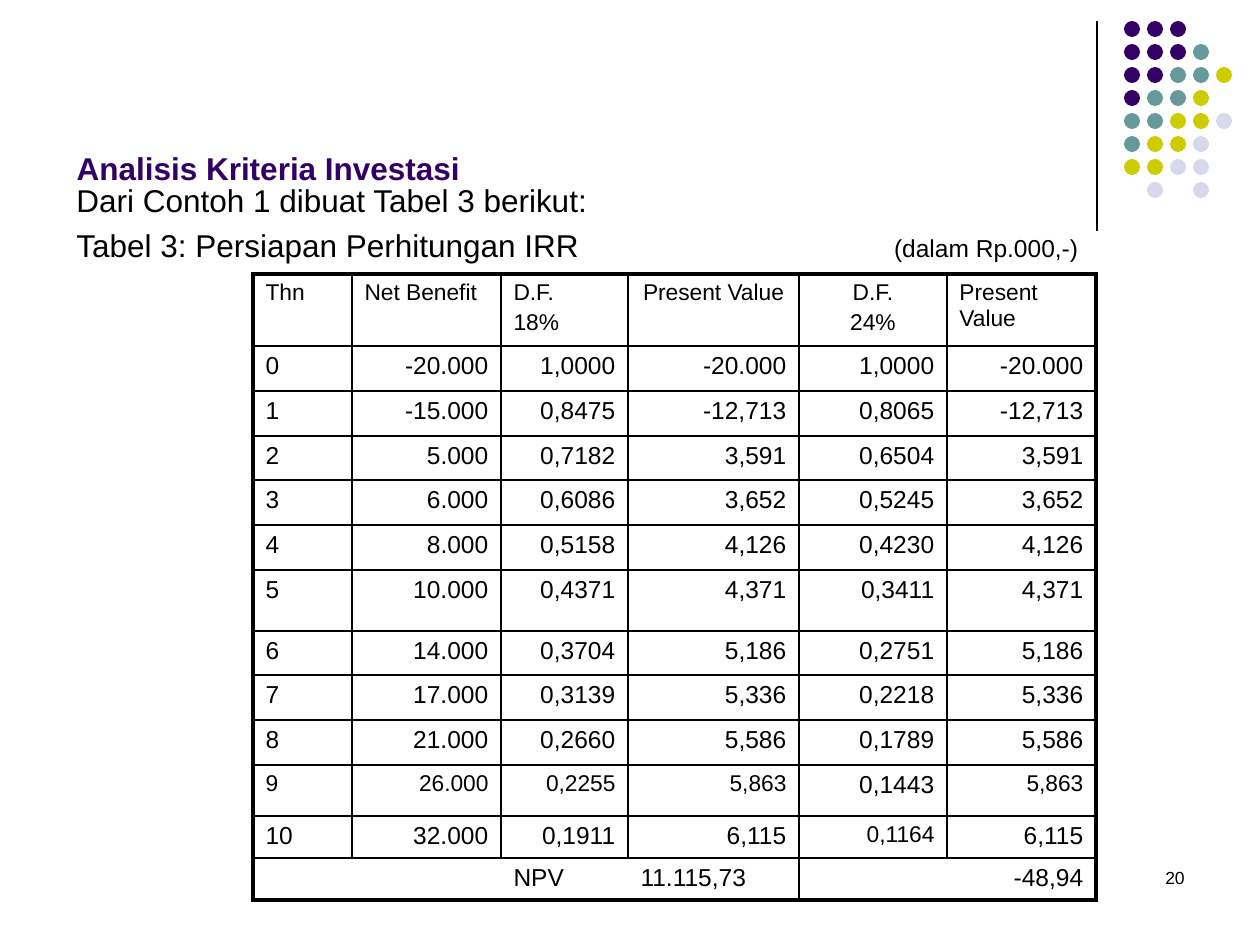
import pptx
import pptx.util
import pptx.dml.color
import pptx.enum.shapes
import pptx.enum.text
import pptx.oxml.ns
from lxml import etree

TITLE = "Analisis Kriteria Investasi"
INTRO = ["Dari Contoh 1 dibuat Tabel 3 berikut:",
         [("Tabel 3: Persiapan Perhitungan IRR\t", 18), ("(dalam Rp.000,-)", 14)]]
PAGE_NUMBER = "20"
HEADER = ["Thn", "Net Benefit", "D.F.\n18%", "Present Value", "D.F.\n24%", "Present Value"]
# year, net benefit, factor at 18%, present value, factor at 24%, present value
YEARS = [
    ["0", "-20.000", "1,0000", "-20.000", "1,0000", "-20.000"],
    ["1", "-15.000", "0,8475", "-12,713", "0,8065", "-12,713"],
    ["2", "5.000", "0,7182", "3,591", "0,6504", "3,591"],
    ["3", "6.000", "0,6086", "3,652", "0,5245", "3,652"],
    ["4", "8.000", "0,5158", "4,126", "0,4230", "4,126"],
    ["5", "10.000", "0,4371", "4,371", "0,3411", "4,371"],
    ["6", "14.000", "0,3704", "5,186", "0,2751", "5,186"],
    ["7", "17.000", "0,3139", "5,336", "0,2218", "5,336"],
    ["8", "21.000", "0,2660", "5,586", "0,1789", "5,586"],
    ["9", "26.000", "0,2255", "5,863", "0,1443", "5,863"],
    ["10", "32.000", "0,1911", "6,115", "0,1164", "6,115"],
]
TOTAL = ["", "", "NPV", "11.115,73", "-48,94", ""]
ROWS = [HEADER, *YEARS, TOTAL]
LAST_ROW, LAST_COL = len(ROWS) - 1, len(HEADER) - 1
COL_WIDTHS = [99, 149, 127, 171, 148, 149]
ROW_HEIGHTS = [72, 45, 45, 44, 45, 45, 61, 44, 45, 45, 51, 42, 42]
SMALL_CELLS = {(10, col) for col in (0, 1, 2, 3, 5)} | {(11, 4)}
CENTERED_HEADERS = (3, 4)

DOT_COLORS = {"P": "330066", "T": "669999", "Y": "CCCC00", "L": "D8D8EC"}
DOT_ROWS = ["PPP", "PPPT", "PPTTY", "PTTY", "TTYYL", "TYYL", "YYLL", " L L"]
DOT_LEFT, DOT_TOP, DOT_PITCH, DOT_SIZE = 1124, 21, 23, 16

BLACK = "000000"
ALIGN = pptx.enum.text.PP_ALIGN


def px(length):
    return pptx.util.Emu(round(length * 914400 / 126))


def color(value):
    return pptx.dml.color.RGBColor.from_string(value)


def add_span(para, text, size, ink=BLACK, bold=False):
    span = para.add_run()
    span.text = text
    for name, value in {"name": "Arial", "size": pptx.util.Pt(size), "bold": bold}.items():
        setattr(span.font, name, value)
    span.font.color.rgb = color(ink)


def add_text_box(page, left, top, width, height):
    box = page.shapes.add_textbox(px(left), px(top), px(width), px(height))
    box.text_frame.word_wrap = True
    return box.text_frame


def add_title(page):
    title = page.shapes.title
    for name, value in {"left": 64, "top": 35, "width": 1134, "height": 158}.items():
        setattr(title, name, px(value))
    title.text_frame.vertical_anchor = pptx.enum.text.MSO_ANCHOR.BOTTOM
    para = title.text_frame.paragraphs[0]
    para.alignment = ALIGN.LEFT
    add_span(para, TITLE, 18, "330066", True)


def add_intro(page):
    frame = add_text_box(page, 64, 175, 1123, 649)
    first, second = frame.paragraphs[0], frame.add_paragraph()
    add_span(first, INTRO[0], 18)
    second.space_before = pptx.util.Pt(4)
    tabs = etree.SubElement(second._p.get_or_add_pPr(), pptx.oxml.ns.qn("a:tabLst"))
    etree.SubElement(tabs, pptx.oxml.ns.qn("a:tab"), pos=str(px(1002)), algn="r")
    for text, size in INTRO[1]:
        add_span(second, text, size)


def add_page_number(page):
    para = add_text_box(page, 903, 861, 294, 63).paragraphs[0]
    para.alignment = ALIGN.RIGHT
    add_span(para, PAGE_NUMBER, 10)


def add_dots(page):
    for row, pattern in enumerate(DOT_ROWS):
        for col, key in enumerate(pattern):
            if key == " ":
                continue
            dot = page.shapes.add_shape(
                pptx.enum.shapes.MSO_SHAPE.OVAL,
                px(DOT_LEFT + col * DOT_PITCH), px(DOT_TOP + row * DOT_PITCH),
                px(DOT_SIZE), px(DOT_SIZE))
            dot.shadow.inherit = False
            dot.fill.solid()
            dot.fill.fore_color.rgb = color(DOT_COLORS[key])
            dot.line.fill.background()


def add_divider(page):
    line = page.shapes.add_connector(
        pptx.enum.shapes.MSO_CONNECTOR.STRAIGHT, px(1097), px(21), px(1097), px(231))
    line.line.width = pptx.util.Pt(0.75)
    line.line.color.rgb = color(BLACK)
    etree.SubElement(line._element.spPr, pptx.oxml.ns.qn("a:effectLst"))


def set_borders(cell, widths):
    """Draw each side at its width in points; 0 hides the side."""
    properties = cell._tc.get_or_add_tcPr()
    for side, width in widths.items():
        edge = etree.SubElement(properties, pptx.oxml.ns.qn("a:ln" + side),
                                w=str(pptx.util.Pt(width)))
        if width:
            fill = etree.SubElement(edge, pptx.oxml.ns.qn("a:solidFill"))
            etree.SubElement(fill, pptx.oxml.ns.qn("a:srgbClr"), val=BLACK)
        else:
            etree.SubElement(edge, pptx.oxml.ns.qn("a:noFill"))


def border_widths(row, col):
    total = row == LAST_ROW
    return {
        "L": 2.25 if col == 0 else 0 if total and col < 4 else 1,
        "R": 2.25 if col == LAST_COL or total and col == 4 else 0 if total and col < 3 else 1,
        "T": 2.25 if row == 0 else 1,
        "B": 2.25 if total else 1,
    }


def cell_alignment(row, col):
    if row == 0:
        return ALIGN.CENTER if col in CENTERED_HEADERS else ALIGN.LEFT
    if col == 0 or row == LAST_ROW and col < 4:
        return ALIGN.LEFT
    return ALIGN.RIGHT


def fill_cell(cell, row, col):
    size = 13 if row == 0 or (row, col) in SMALL_CELLS else 14
    for index, text in enumerate(ROWS[row][col].split("\n")):
        frame = cell.text_frame
        para = frame.add_paragraph() if index else frame.paragraphs[0]
        para.alignment = cell_alignment(row, col)
        if index:
            para.space_before = pptx.util.Pt(2.6)
        if text:
            add_span(para, text, size)
        else:
            para._p.get_or_add_endParaRPr().set("sz", str(size * 100))
    set_borders(cell, border_widths(row, col))
    cell.fill.background()


def add_irr_table(page):
    table = page.shapes.add_table(
        len(ROWS), len(HEADER), px(253), px(274),
        px(sum(COL_WIDTHS)), px(sum(ROW_HEIGHTS))).table
    table.first_row = table.horz_banding = False
    for column, width in zip(table.columns, COL_WIDTHS):
        column.width = px(width)
    for line, height in zip(table.rows, ROW_HEIGHTS):
        line.height = px(height)
    for row in range(len(ROWS)):
        for col in range(len(HEADER)):
            fill_cell(table.cell(row, col), row, col)
    table.cell(LAST_ROW, 4).merge(table.cell(LAST_ROW, 5))


def main():
    deck = pptx.Presentation()
    deck.slide_width, deck.slide_height = px(1260), px(945)
    page = deck.slides.add_slide(deck.slide_layouts[5])
    add_divider(page)
    add_dots(page)
    add_page_number(page)
    add_title(page)
    add_intro(page)
    add_irr_table(page)
    deck.save("out.pptx")


if __name__ == "__main__":
    main()
